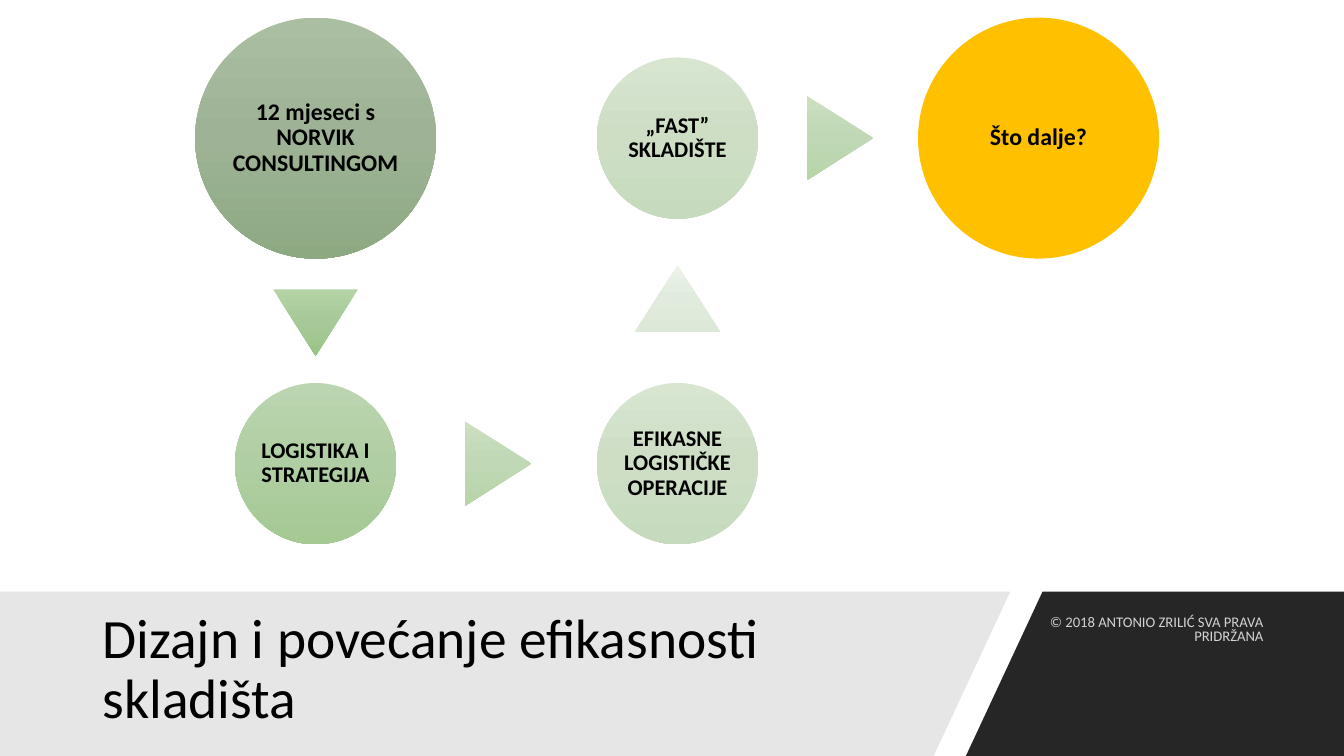
from lxml import etree
from pptx import Presentation
from pptx.dml.color import RGBColor
from pptx.enum.shapes import MSO_SHAPE as SHAPE
from pptx.enum.text import MSO_ANCHOR as ANCHOR, PP_ALIGN as ALIGN
from pptx.oxml.ns import qn
from pptx.util import Inches, Pt

COLORS = {
    "black": "000000",
    "white": "FFFFFF",
    "dark": "262626",
    "grey": "E7E6E6",
    "gold": "FFC000",
}
GRADIENTS = {
    "sage": ("AABEA2", "9EB395", "8DA982"),
    "leaf": ("BBD5B0", "B0CEA3", "A4C993"),
    "pale": ("D7E5D1", "CDDEC5", "C6DBBD"),
    "arrow_deep": ("B3D3A5", "A7C999", "99C486"),
    "arrow_mid": ("CBDFC1", "C0D8B5", "B7D5A9"),
    "arrow_pale": ("EBF2E8", "E1EBDD", "DDE9D8"),
}
COLUMNS = (3.13, 6.72, 10.3)
ROWS = (1.37, 4.6)
BIG, SMALL = 2.39, 1.6


class SlideBuilder:
    font = "Calibri"

    def __init__(self, slide):
        self.slide = slide

    def paint(self, sp, fill):
        sp.shadow.inherit = False
        sp.line.fill.background()
        if fill in COLORS:
            sp.fill.solid()
            sp.fill.fore_color.rgb = RGBColor.from_string(COLORS[fill])
            return
        sp.fill.gradient()
        sp.fill.gradient_angle = 270
        grad = sp._element.spPr.find(qn("a:gradFill"))
        grad.set("rotWithShape", "0")
        stops = grad.find(qn("a:gsLst"))
        for stop in list(stops):
            stops.remove(stop)
        for pos, color in zip((0, 50000, 100000), GRADIENTS[fill]):
            stop = etree.SubElement(stops, qn("a:gs"), pos=str(pos))
            etree.SubElement(stop, qn("a:srgbClr"), val=color)

    def set_text(self, sp, text, size, color="black", bold=False, align=ALIGN.LEFT,
                 spacing=0.9, after=0, inset=None, alpha=None):
        tf = sp.text_frame
        tf.word_wrap = True
        tf.vertical_anchor = ANCHOR.MIDDLE
        if inset is not None:
            tf.margin_left = tf.margin_right = Inches(inset)
            tf.margin_top = tf.margin_bottom = Inches(inset)
        p = tf.paragraphs[0]
        p.alignment = align
        p.line_spacing = spacing
        p.space_after = Pt(after)
        r = p.add_run()
        r.text = text
        r.font.name = self.font
        r.font.size = Pt(size)
        r.font.bold = bold
        r.font.color.rgb = RGBColor.from_string(COLORS[color])
        if alpha:
            clr = r._r.rPr.find(".//" + qn("a:srgbClr"))
            etree.SubElement(clr, qn("a:alpha"), val=str(alpha * 1000))

    def text(self, x, y, w, h, text, size, **style):
        sp = self.slide.shapes.add_textbox(Inches(x), Inches(y), Inches(w), Inches(h))
        self.set_text(sp, text, size, **style)

    def centered(self, kind, cx, cy, w, h, fill):
        sp = self.slide.shapes.add_shape(
            kind, Inches(cx - w / 2), Inches(cy - h / 2), Inches(w), Inches(h))
        self.paint(sp, fill)
        return sp

    def circle(self, col, row, diameter, fill, text, size):
        sp = self.centered(SHAPE.OVAL, COLUMNS[col], ROWS[row], diameter, diameter, fill)
        self.set_text(sp, text, size, bold=True, align=ALIGN.CENTER, inset=0.02)

    def arrow(self, cx, cy, rotation, fill):
        sp = self.centered(SHAPE.ISOSCELES_TRIANGLE, cx, cy, 0.84, 0.66, fill)
        sp.rotation = rotation

    def polygon(self, points, fill):
        start, *rest = [(Inches(x), Inches(y)) for x, y in points]
        fb = self.slide.shapes.build_freeform(*start)
        fb.add_line_segments(rest, close=True)
        self.paint(fb.convert_to_shape(), fill)


def main():
    prs = Presentation()
    prs.slide_width, prs.slide_height = Inches(13.33), Inches(7.5)
    s = SlideBuilder(prs.slides.add_slide(prs.slide_layouts[6]))

    s.polygon([(10.34, 5.87), (13.33, 5.87), (13.33, 7.5), (9.58, 7.5)], "dark")
    s.polygon([(0, 5.87), (10.02, 5.87), (9.26, 7.5), (0, 7.5)], "grey")
    s.text(0.92, 6.05, 8.44, 1.2, "Dizajn i povećanje efikasnosti skladišta", 39.6)

    for circle in (
        (0, 0, BIG, "sage", "12 mjeseci s NORVIK CONSULTINGOM", 17),
        (0, 1, SMALL, "leaf", "LOGISTIKA I STRATEGIJA", 16),
        (1, 1, SMALL, "pale", "EFIKASNE LOGISTIČKE OPERACIJE", 16),
        (1, 0, SMALL, "pale", "„FAST” SKLADIŠTE", 16),
        (2, 0, BIG, "gold", "Što dalje?", 17),
    ):
        s.circle(*circle)

    for arrow in (
        (COLUMNS[0], 3.2, 180, "arrow_deep"),
        (4.94, ROWS[1], 90, "arrow_mid"),
        (COLUMNS[1], 2.96, 0, "arrow_pale"),
        (8.33, ROWS[0], 90, "arrow_mid"),
    ):
        s.arrow(*arrow)

    s.text(10.3, 6.05, 2.33, 0.4, "© 2018 ANTONIO ZRILIĆ SVA PRAVA PRIDRŽANA", 10.5,
           color="white", align=ALIGN.RIGHT, spacing=0.8, after=6, alpha=80)
    prs.save("out.pptx")


if __name__ == "__main__":
    main()
